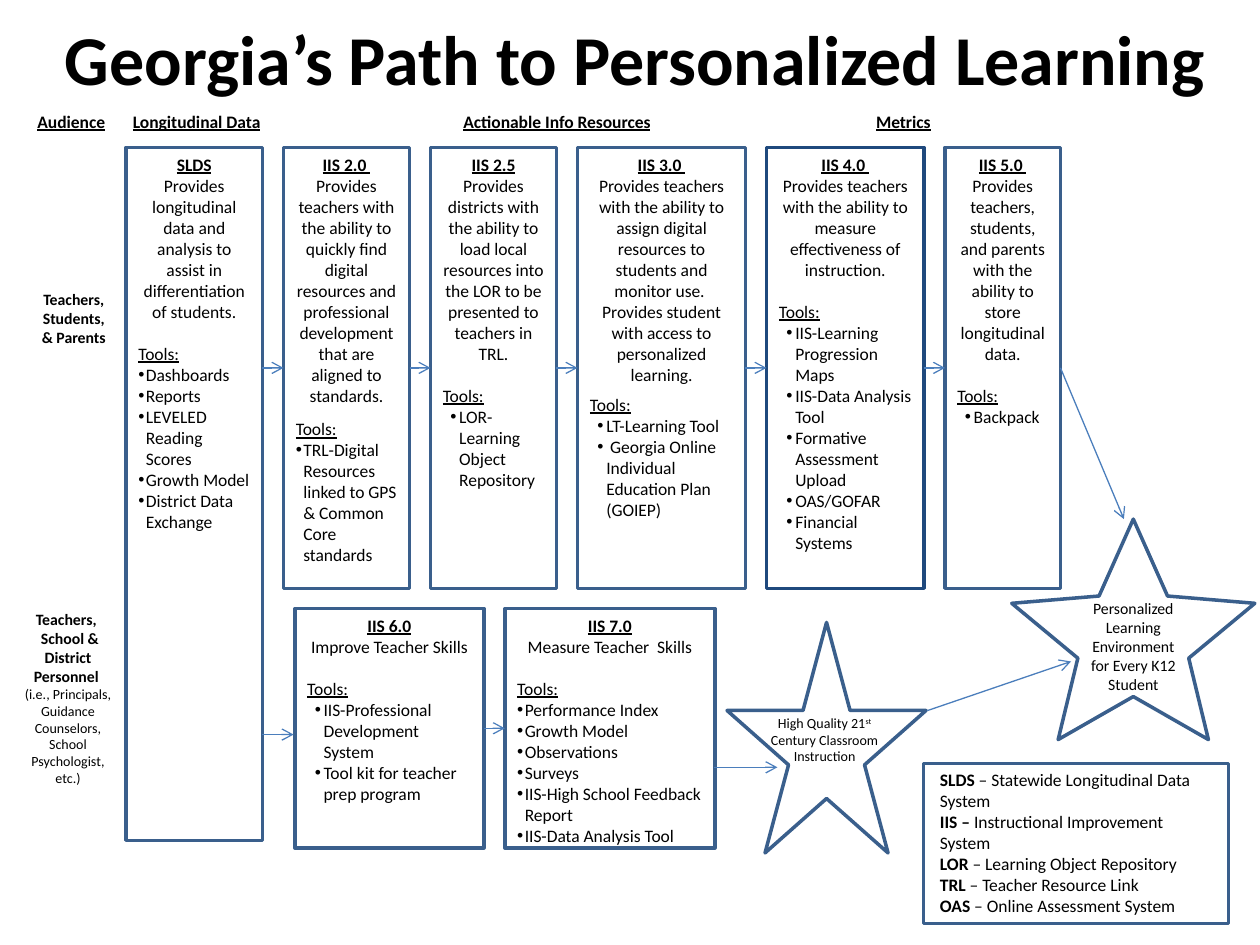
from lxml.etree import SubElement
from pptx import Presentation
from pptx.dml.color import RGBColor
from pptx.enum.shapes import MSO_CONNECTOR, MSO_SHAPE
from pptx.enum.text import MSO_ANCHOR, MSO_AUTO_SIZE, PP_ALIGN
from pptx.oxml.ns import qn
from pptx.util import Inches, Pt

BLACK, WHITE = "000000", "FFFFFF"
OUTLINE, DARK_OUTLINE, ARROW = "3A5F8C", "1F497D", "4B7EBC"
GAP = 1 / 6
TOP_ROW, TOP_HEIGHT, SLDS_HEIGHT = 1.17, 3.5, 5.5
LOWER_ROW, LOWER_HEIGHT = 4.83, 1.9
NARROW, WIDE = (0.06, 0.06), (0.13, 0.07)  # bullet text indent and hang

TITLE = "Georgia’s Path to Personalized Learning"
HEADINGS = [  # text, left, top, width
    ("Audience", 0.19, 0.83, 0.75),
    ("Longitudinal Data", 0.77, 0.83, 1.58),
    ("Actionable Info Resources", 2.42, 0.83, 4),
    ("Metrics", 6.42, 0.83, 1.5),
]
# heading, description, space before tools in points, bullet indent, tools, width
TOP_STAGES = [
    ("SLDS", ["Provides longitudinal data and",
              "analysis to assist in differentiation of students."], 12, NARROW,
     ["Dashboards", "Reports", "LEVELED Reading Scores", "Growth Model",
      "District Data Exchange"], 13 / 12),
    ("IIS 2.0 ", ["Provides teachers with the ability to quickly find digital resources "
                  "and professional development that are aligned to standards."], 7, NARROW,
     ["TRL-Digital Resources linked to GPS & Common Core standards"], 1),
    ("IIS 2.5", ["Provides districts with the ability to load local resources into the "
                 "LOR to be presented to teachers in TRL."], 12, WIDE,
     ["LOR- Learning Object Repository"], 1),
    ("IIS 3.0 ", ["Provides teachers with the ability to assign digital resources to "
                  "students and monitor use.  Provides student with access to "
                  "personalized learning."], 5, WIDE,
     ["LT-Learning Tool", " Georgia Online Individual Education Plan (GOIEP)"], 4 / 3),
    ("IIS 4.0 ", ["Provides teachers with the ability to measure effectiveness of "
                  "instruction."], 12, WIDE,
     ["IIS-Learning Progression Maps", "IIS-Data Analysis Tool",
      "Formative Assessment Upload", "OAS/GOFAR", "Financial Systems"], 1.25),
    ("IIS 5.0 ", ["Provides teachers, students, and parents with the ability to store "
                  "longitudinal data."], 12, WIDE, ["Backpack"], 11 / 12),
]
LOWER_STAGES = [
    ("IIS 6.0", ["Improve Teacher Skills"], 12, WIDE,
     ["IIS-Professional Development System", "Tool kit for teacher prep program"], 1.5),
    ("IIS 7.0", ["Measure Teacher  Skills"], 12, NARROW,
     ["Performance Index", "Growth Model", "Observations", "Surveys",
      "IIS-High School Feedback Report", "IIS-Data Analysis Tool"], 5 / 3),
]
STUDENT_GOAL = "Personalized Learning Environment for Every K12 Student"
TEACHER_GOAL = [("High Quality 21", {}), ("st", {"superscript": True}),
                (" Century Classroom Instruction", {})]
LEGEND = [
    ("SLDS ", "– Statewide Longitudinal Data System"),
    ("IIS – ", "Instructional Improvement System"),
    ("LOR", " – Learning Object Repository"),
    ("TRL", " – Teacher Resource Link"),
    ("OAS", " – Online Assessment System"),
]


def color(value):
    return RGBColor.from_string(value)


def write(frame, text, size=10, bold=False, underline=False, align=PP_ALIGN.LEFT,
          before=0, bullet=None):
    """Add a paragraph; text is a string or a list of (text, format) runs."""
    paragraph = frame.add_paragraph() if frame.text else frame.paragraphs[0]
    paragraph.alignment = align
    paragraph.space_before = Pt(before)
    if bullet:
        indent, hang = bullet
        properties = paragraph._p.get_or_add_pPr()
        properties.set("marL", str(Inches(indent)))
        properties.set("indent", str(-Inches(hang)))
        SubElement(properties, qn("a:buFont"), typeface="Arial")
        SubElement(properties, qn("a:buChar"), char="•")
    for words, changes in [(text, {})] if isinstance(text, str) else text:
        run = paragraph.add_run()
        run.text = words
        run.font.name = "Calibri"
        run.font.size = Pt(size)
        run.font.bold = changes.get("bold", bold)
        run.font.underline = underline
        run.font.color.rgb = color(BLACK)
        if changes.get("superscript"):
            run._r.get_or_add_rPr().set("baseline", "30000")


def add_label(slide, left, top, width, height):
    frame = slide.shapes.add_textbox(
        Inches(left), Inches(top), Inches(width), Inches(height)).text_frame
    frame.word_wrap = True
    return frame


def add_outlined(slide, preset, left, top, width, height, line=OUTLINE, fill=None,
                 anchor=MSO_ANCHOR.TOP):
    shape = slide.shapes.add_shape(
        preset, Inches(left), Inches(top), Inches(width), Inches(height))
    shape.shadow.inherit = False
    if fill:
        shape.fill.solid()
        shape.fill.fore_color.rgb = color(fill)
    else:
        shape.fill.background()
    shape.line.color.rgb = color(line)
    shape.line.width = Pt(2)
    shape.text_frame.word_wrap = True
    shape.text_frame.vertical_anchor = anchor
    return shape


def add_stages(slide, stages, left, top, height):
    """Draw a row of stage boxes with equal gaps, and return the boxes."""
    boxes = []
    for heading, description, gap, bullet, tools, width in stages:
        box = add_outlined(slide, MSO_SHAPE.RECTANGLE, left, top, width,
                           SLDS_HEIGHT if heading == "SLDS" else height,
                           line=DARK_OUTLINE if heading == "IIS 4.0 " else OUTLINE)
        frame = box.text_frame
        write(frame, heading, bold=True, underline=True, align=PP_ALIGN.CENTER)
        for text in description:
            write(frame, text, align=PP_ALIGN.CENTER)
        write(frame, "Tools:", underline=True, before=gap)
        for tool in tools:
            write(frame, tool, bullet=bullet)
        boxes.append(box)
        left += width + GAP
    return boxes


def add_arrow(slide, start, end, source=None, target=None):
    """Draw an arrow, joined to the right of source and the left of target if given."""
    connector = slide.shapes.add_connector(
        MSO_CONNECTOR.STRAIGHT, *[Inches(value) for value in (*start, *end)])
    if source:
        connector.begin_connect(source, 3)
    if target:
        connector.end_connect(target, 1)
    connector.line.color.rgb = color(ARROW)
    connector.line.width = Pt(0.75)
    SubElement(connector.line._get_or_add_ln(), qn("a:tailEnd"), type="arrow")
    SubElement(connector._element.spPr, qn("a:effectLst"))


def main():
    presentation = Presentation()
    presentation.slide_width, presentation.slide_height = Inches(10), Inches(7.5)
    slide = presentation.slides.add_slide(presentation.slide_layouts[5])

    title = slide.shapes.title
    title.left, title.top = Inches(-0.17), Inches(0.07)
    title.width, title.height = Inches(10.42), Inches(0.77)
    title.text_frame.auto_size = MSO_AUTO_SIZE.NONE
    write(title.text_frame, TITLE, size=40, bold=True, align=PP_ALIGN.CENTER)

    for text, left, top, width in HEADINGS:
        write(add_label(slide, left, top, width, 0.27), text, bold=True, underline=True,
              align=PP_ALIGN.CENTER)
    write(add_label(slide, 0.21, 2.25, 0.75, 0.56), "Teachers, Students,& Parents",
          size=9, bold=True, align=PP_ALIGN.CENTER)
    staff = add_label(slide, 0.08, 4.79, 0.92, 1.68)
    for text in ("Teachers, ", " School & District Personnel "):
        write(staff, text, size=9, bold=True, align=PP_ALIGN.CENTER)
    write(staff, "(i.e., Principals, Guidance Counselors, School Psychologist, etc.)",
          size=8, align=PP_ALIGN.CENTER)

    top_boxes = add_stages(slide, TOP_STAGES, 1, TOP_ROW, TOP_HEIGHT)
    lower_boxes = add_stages(slide, LOWER_STAGES, 2.34, LOWER_ROW, LOWER_HEIGHT)

    add_outlined(slide, MSO_SHAPE.STAR_5_POINT, 5.77, 4.94, 1.58, 1.83, fill=WHITE)
    write(add_label(slide, 5.92, 5.62, 1.25, 0.51), TEACHER_GOAL, size=8,
          align=PP_ALIGN.CENTER)
    student_star = add_outlined(slide, MSO_SHAPE.STAR_5_POINT, 8.03, 4.12, 1.93, 1.75,
                                fill=WHITE, anchor=MSO_ANCHOR.MIDDLE)
    student_star.adjustments[0] = 0.228
    write(student_star.text_frame, STUDENT_GOAL, size=9, align=PP_ALIGN.CENTER)

    legend = add_outlined(slide, MSO_SHAPE.RECTANGLE, 7.33, 6.06, 2.42, 1.27,
                          fill=WHITE).text_frame
    legend.margin_left, legend.margin_top = Inches(0.13), Inches(0.04)
    for term, meaning in LEGEND:
        write(legend, [(term, {"bold": True}), (meaning, {})])

    slds, *iis_boxes = top_boxes
    add_arrow(slide, (2.08, 2.92), (2.25, 2.92), target=iis_boxes[0])
    for row in (iis_boxes, lower_boxes):
        for source, target in zip(row, row[1:]):
            add_arrow(slide, (0, 0), (0, 0), source, target)
    add_arrow(slide, (8.42, 2.92), (8.92, 4.12), source=iis_boxes[-1])
    add_arrow(slide, (2.08, 5.83), (2.33, 5.83))
    add_arrow(slide, (5.67, 6.09), (6.17, 6.09))
    add_arrow(slide, (7.36, 5.64), (8.5, 5.25))

    presentation.save("out.pptx")


if __name__ == "__main__":
    main()
